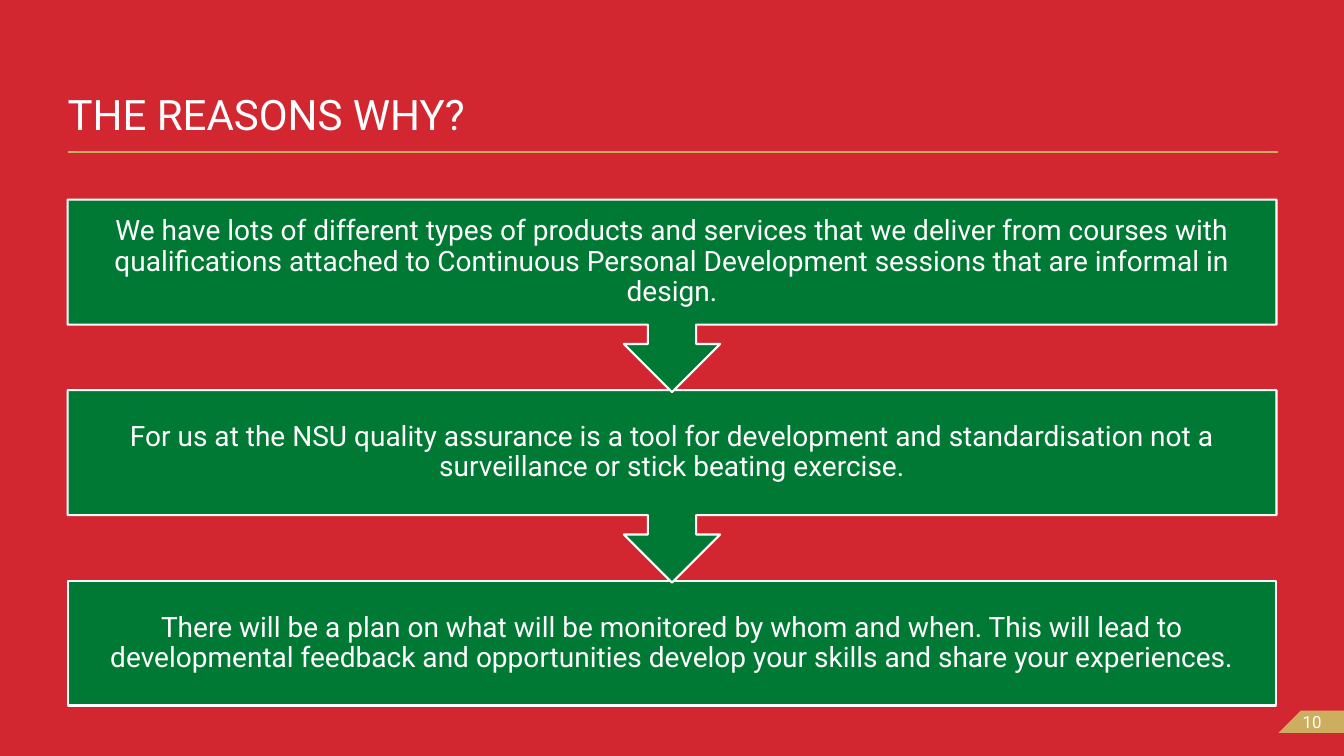
from pptx import Presentation
from pptx.dml.color import RGBColor
from pptx.enum.shapes import MSO_CONNECTOR, MSO_SHAPE
from pptx.enum.text import MSO_ANCHOR, MSO_AUTO_SIZE, PP_ALIGN
from pptx.oxml.ns import qn
from pptx.util import Inches, Pt
from lxml.etree import SubElement

COLOURS = {"red": "D22730", "green": "007934", "gold": "CDAD5F", "white": "FFFFFF"}
FONT = "Roboto"
REASONS = [
    "We have lots of different types of products and services that we deliver from "
    "courses with qualifications attached to Continuous Personal Development sessions "
    "that are informal in design.",
    "For us at the NSU quality assurance is a tool for development and standardisation "
    "not a surveillance or stick beating exercise.",
    "There will be a plan on what will be monitored by whom and when. This will lead to "
    "developmental feedback and opportunities develop your skills and share your "
    "experiences.",
]


def colour(name):
    return RGBColor.from_string(COLOURS[name])


def write_text(shape, text, size, align=PP_ALIGN.LEFT, anchor=MSO_ANCHOR.MIDDLE,
               insets=(0, 0, 0, 0), line_spacing=1.0, space_after=0):
    frame = shape.text_frame
    frame.word_wrap = True
    frame.auto_size = MSO_AUTO_SIZE.NONE
    frame.vertical_anchor = anchor
    (frame.margin_left, frame.margin_top,
     frame.margin_right, frame.margin_bottom) = [Inches(inset) for inset in insets]
    para = frame.paragraphs[0]
    para.alignment = align
    para.line_spacing = line_spacing
    para.space_before = Pt(0)
    para.space_after = Pt(space_after)
    span = para.add_run()
    span.text = text
    span.font.name = FONT
    span.font.size = Pt(size)
    span.font.color.rgb = colour("white")


def paint(shape, fill, line=None):
    shape.shadow.inherit = False
    shape.fill.solid()
    shape.fill.fore_color.rgb = colour(fill)
    if line:
        shape.line.color.rgb = colour(line)
        shape.line.width = Pt(1.5)
    else:
        shape.line.fill.background()


def add_heading(page, left, top, width, height):
    # Title
    title = page.shapes.title
    title.left, title.top = Inches(left), Inches(top)
    title.width, title.height = Inches(10.65), Inches(height)
    write_text(title, "THE REASONS WHY?", 30, anchor=MSO_ANCHOR.BOTTOM, line_spacing=0.8)

    # Gold rule below the title
    rule_top = Inches(top + height + 0.14)
    rule = page.shapes.add_connector(MSO_CONNECTOR.STRAIGHT, Inches(left), rule_top,
                                     Inches(left + width), rule_top)
    rule.line.color.rgb = colour("gold")
    rule.line.width = Pt(1)
    SubElement(rule._element.spPr, qn("a:effectLst"))


def add_page_number(page, left, top, width, height):
    slant = 0.22
    builder = page.shapes.build_freeform(Inches(left + slant), Inches(top))
    builder.add_line_segments([
        (Inches(left + width), Inches(top)),
        (Inches(left + width), Inches(top + height)),
        (Inches(left), Inches(top + height)),
    ], close=True)
    tab = builder.convert_to_shape()
    paint(tab, "gold")
    write_text(tab, "10", 12, insets=(0.24, 0, 0, 0), space_after=6)


def add_reasons(page, left, top, width, height):
    box_height, callout_height = 1.24, 1.91
    step = (height - box_height) / (len(REASONS) - 1)
    # Built from the bottom up so that each arrow tip overlaps the box below
    for index, reason in reversed(list(enumerate(REASONS))):
        is_last = index == len(REASONS) - 1
        box = page.shapes.add_shape(
            MSO_SHAPE.RECTANGLE if is_last else MSO_SHAPE.DOWN_ARROW_CALLOUT,
            Inches(left), Inches(top + index * step),
            Inches(width), Inches(box_height if is_last else callout_height))
        paint(box, "green", "white")
        write_text(box, reason, 20, align=PP_ALIGN.CENTER,
                   insets=(0.16, 0.16, 0.16, 0.16), line_spacing=0.9)


def main():
    deck = Presentation()
    deck.slide_width, deck.slide_height = Inches(13.33), Inches(7.5)
    page = deck.slides.add_slide(deck.slide_layouts[5])
    page.background.fill.solid()
    page.background.fill.fore_color.rgb = colour("red")

    add_heading(page, 0.67, 0.5, 12.01, 0.87)
    add_page_number(page, 12.68, 7.05, 0.65, 0.22)
    add_reasons(page, 0.67, 1.98, 11.99, 5.02)
    deck.save("out.pptx")


if __name__ == "__main__":
    main()
